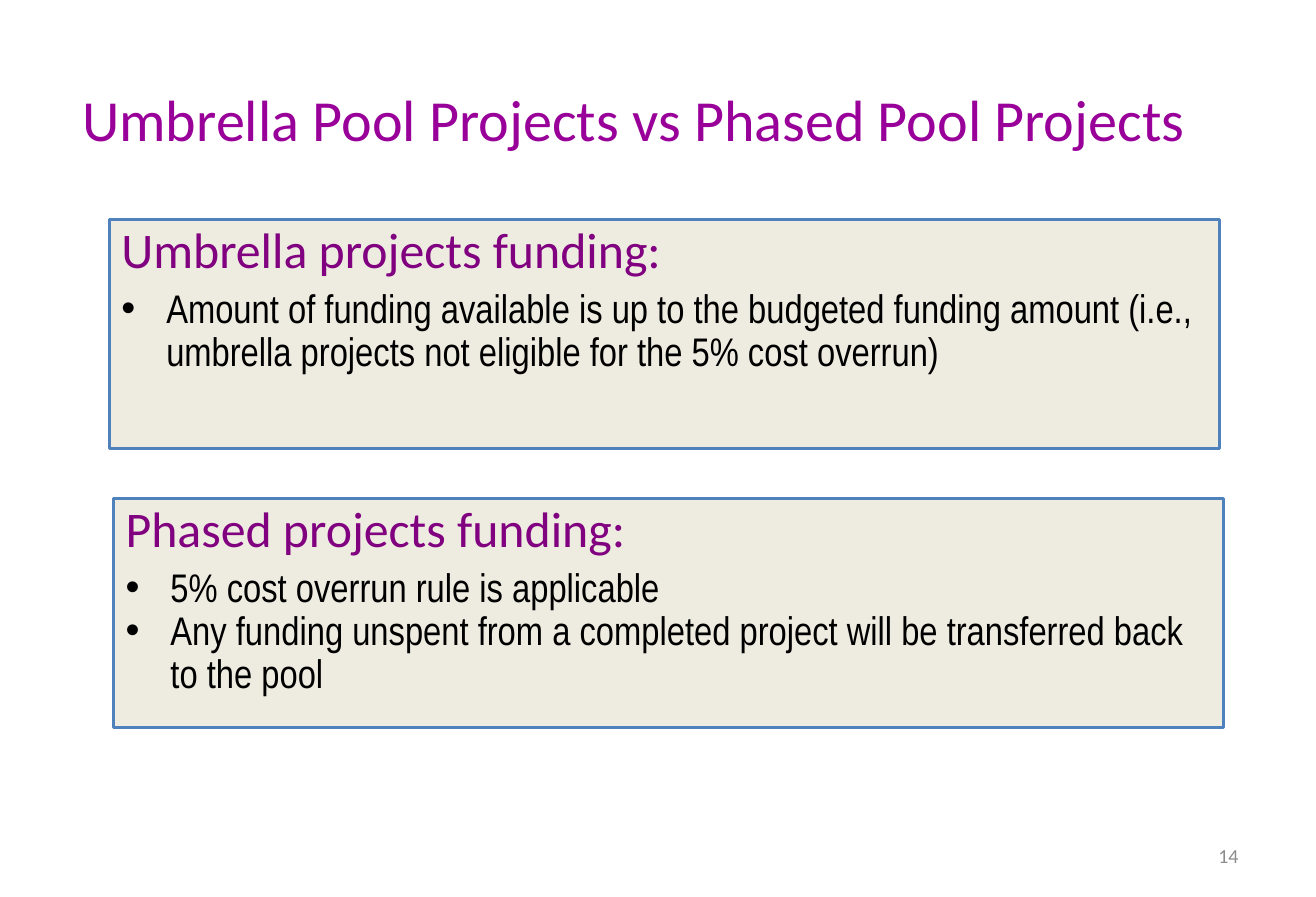
"""Build a slide comparing the funding of umbrella and phased pool projects."""
from dataclasses import dataclass

from lxml.etree import SubElement
from pptx import Presentation
from pptx.dml.color import RGBColor as Rgb
from pptx.enum.shapes import MSO_SHAPE as Preset
from pptx.enum.text import MSO_ANCHOR as Anchor, MSO_AUTO_SIZE as AutoSize, PP_ALIGN as Align
from pptx.oxml.ns import qn
from pptx.util import Pt


@dataclass(frozen=True)
class Theme:
    title_color: Rgb = Rgb(0x99, 0x00, 0x99)
    heading_color: Rgb = Rgb(0x80, 0x00, 0x80)
    body_color: Rgb = Rgb(0x00, 0x00, 0x00)
    number_color: Rgb = Rgb(0x8C, 0x8C, 0x8C)
    panel_fill: Rgb = Rgb(0xEE, 0xEC, 0xE1)
    panel_line: Rgb = Rgb(0x4F, 0x81, 0xBD)
    main_font: str = "Calibri"
    body_font: str = "Arial Narrow"
    title_size: int = 35
    heading_size: int = 30
    body_size: int = 24
    number_size: int = 12
    hanging: int = 27


THEME = Theme()
PANEL_WIDTH, PANEL_HEIGHT = 668, 138
PANELS = [
    (66, 132, "Umbrella projects funding:", [
        "Amount of funding available is up to the budgeted funding amount "
        "(i.e., umbrella projects not eligible for the 5% cost overrun)",
    ]),
    (68.5, 300, "Phased projects funding:", [
        "5% cost overrun rule is applicable",
        "Any funding unspent from a completed project will be transferred back to the pool",
    ]),
]


def add_run(paragraph, text, font, size, color):
    run = paragraph.add_run()
    run.text = text
    run.font.name = font
    run.font.size = Pt(size)
    run.font.color.rgb = color


def set_title(slide, text):
    title = slide.shapes.title
    title.left, title.top, title.width, title.height = Pt(30), Pt(30), Pt(720), Pt(82)
    frame = title.text_frame
    frame.auto_size = AutoSize.NONE
    frame.word_wrap = True
    frame.vertical_anchor = Anchor.MIDDLE
    frame.margin_right = Pt(24)
    paragraph = frame.paragraphs[0]
    paragraph.alignment = Align.CENTER
    add_run(paragraph, text, THEME.main_font, THEME.title_size, THEME.title_color)


def format_paragraph(paragraph, space_after=0, bullet=None):
    paragraph.alignment = Align.LEFT
    paragraph.line_spacing = 0.9
    paragraph.space_after = Pt(space_after)
    properties = paragraph._p.get_or_add_pPr()
    properties.set("marL", str(Pt(THEME.hanging)))
    properties.set("indent", str(-Pt(THEME.hanging)))
    if bullet:
        SubElement(properties, qn("a:buFont")).set("typeface", "Arial")
        SubElement(properties, qn("a:buChar")).set("char", bullet)


def add_panel(slide, left, top, heading, points):
    panel = slide.shapes.add_shape(
        Preset.RECTANGLE, Pt(left), Pt(top), Pt(PANEL_WIDTH), Pt(PANEL_HEIGHT))
    panel.shadow.inherit = False
    panel.fill.solid()
    panel.fill.fore_color.rgb = THEME.panel_fill
    panel.line.color.rgb = THEME.panel_line
    panel.line.width = Pt(2)
    frame = panel.text_frame
    frame.word_wrap = True
    frame.vertical_anchor = Anchor.TOP
    paragraph = frame.paragraphs[0]
    format_paragraph(paragraph, space_after=6)
    add_run(paragraph, heading, THEME.main_font, THEME.heading_size, THEME.heading_color)
    for point in points:
        paragraph = frame.add_paragraph()
        format_paragraph(paragraph, bullet="•")
        add_run(paragraph, point, THEME.body_font, THEME.body_size, THEME.body_color)


def add_page_number(slide, number):
    box = slide.shapes.add_textbox(Pt(567.5), Pt(500.5), Pt(185), Pt(28.5))
    frame = box.text_frame
    frame.word_wrap = True
    frame.vertical_anchor = Anchor.MIDDLE
    paragraph = frame.paragraphs[0]
    paragraph.alignment = Align.RIGHT
    add_run(paragraph, number, THEME.main_font, THEME.number_size, THEME.number_color)


def main():
    presentation = Presentation()
    presentation.slide_width, presentation.slide_height = Pt(792), Pt(540)
    title_only = presentation.slide_layouts.get_by_name("Title Only")
    slide = presentation.slides.add_slide(title_only)
    set_title(slide, "Umbrella Pool Projects vs Phased Pool Projects")
    for left, top, heading, points in PANELS:
        add_panel(slide, left, top, heading, points)
    add_page_number(slide, "14")
    presentation.save("out.pptx")


if __name__ == "__main__":
    main()
